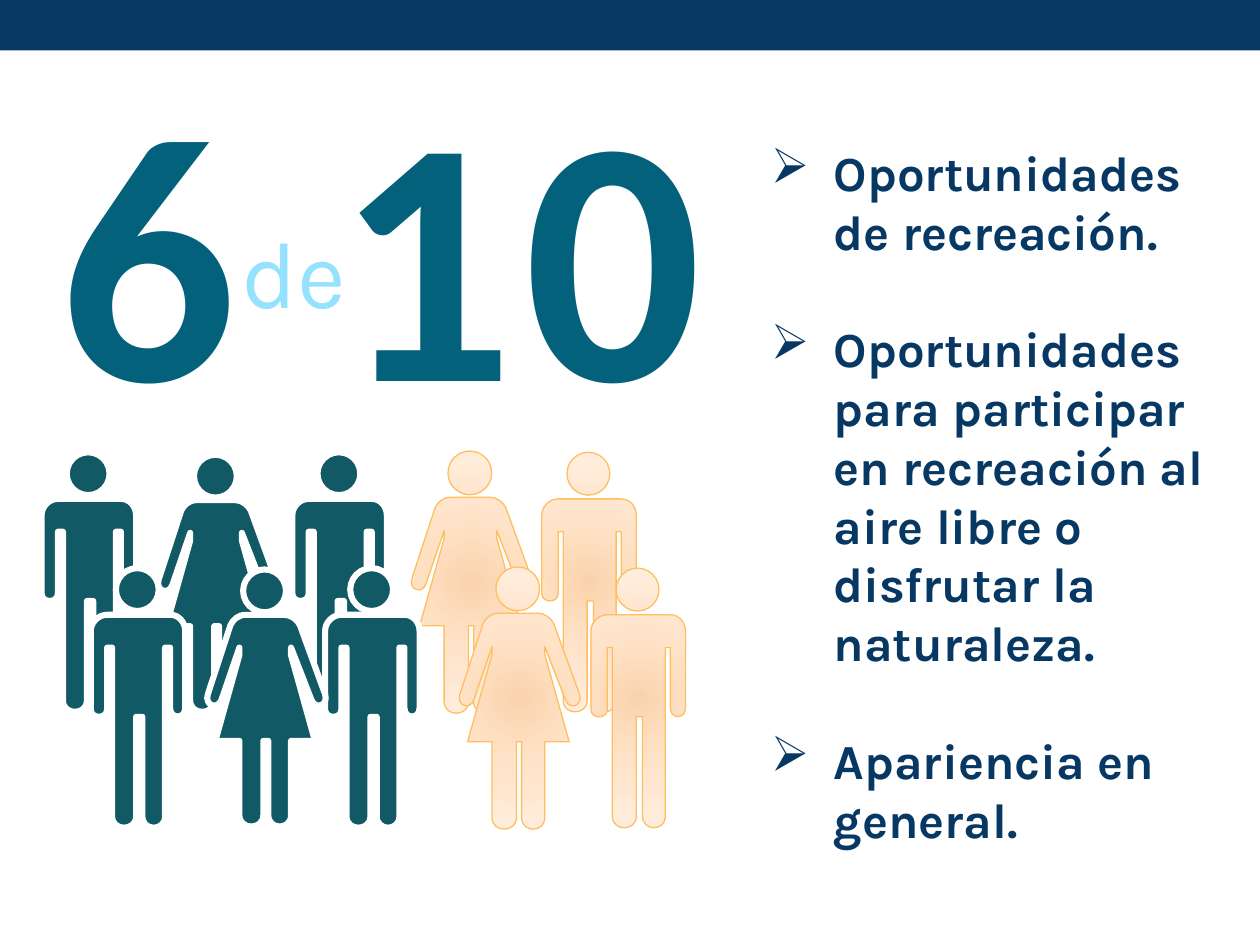
from lxml.etree import SubElement, fromstring
from pptx import Presentation
from pptx.dml.color import RGBColor
from pptx.enum.shapes import MSO_SHAPE as Shape
from pptx.enum.text import MSO_AUTO_SIZE as AutoSize, PP_ALIGN as Align
from pptx.oxml.ns import nsdecls, qn
from pptx.util import Inches, Pt

NAVY, BLUE, SKY = "073763", "04617B", "95E2FF"
TEAL, WHITE, ORANGE = "115964", "FFFFFF", "FFBE5F"
GLOW = [(0, "FAD3AD"), (45, "FFE3C8"), (100, "FFEFE1")]
NEEDS = [
    "Oportunidades de recreación.",
    "Oportunidades para participar en recreación al aire libre o disfrutar la naturaleza.",
    "Apariencia en general.",
]

MAN = [
    (13, 37), (63, 37), (70, 37, 75, 43, 75, 50),
    (75, 111), (75, 120, 63, 120, 63, 111), (63, 63), (59, 63),
    (59, 197), (59, 209, 41, 209, 41, 197), (41, 118), (36, 118),
    (36, 197), (36, 209, 17, 209, 17, 197), (17, 63), (13, 63),
    (13, 112), (13, 120, 0, 120, 0, 112), (0, 50), (0, 43, 6, 37, 13, 37),
]
WOMAN = [
    (31, 36), (62, 36), (67, 36, 72, 40, 74, 44),
    (94, 99), (97, 108, 86, 112, 83, 103), (67, 62), (67, 68), (86, 136), (67, 136),
    (67, 195), (67, 207, 49, 207, 49, 195), (49, 136), (45, 136),
    (45, 195), (45, 207, 26, 207, 26, 195), (26, 136), (7, 136), (26, 68), (26, 62),
    (12, 103), (9, 112, -2, 108, 1, 99), (19, 44), (21, 40, 25, 36, 31, 36),
]
HEAD_RADIUS = 17
BODIES = {"man": (MAN, 37, 75, 206), "woman": (WOMAN, 46, 94, 204)}
PEOPLE = [
    ("man", .33, 3.59, True), ("man", 2.32, 3.59, True), ("man", 4.30, 3.59, False),
    ("woman", 1.25, 3.61, True), ("woman", 3.26, 3.58, False),
    ("man", .72, 4.51, True), ("man", 2.58, 4.51, True), ("man", 4.69, 4.51, False),
    ("woman", 1.64, 4.52, True), ("woman", 3.64, 4.50, False),
]


def color(value):
    return RGBColor.from_string(value)


def add_step(contour, kind, coordinates):
    step = SubElement(contour, qn(f"a:{kind}"))
    for x, y in zip(coordinates[::2], coordinates[1::2]):
        point = SubElement(step, qn("a:pt"))
        point.set("x", str(x))
        point.set("y", str(y))


def draw_contours(contour, outline, head_x):
    for step in list(contour):
        contour.remove(step)
    add_step(contour, "moveTo", outline[0])
    for part in outline[1:]:
        add_step(contour, "lnTo" if len(part) == 2 else "cubicBezTo", part)
    add_step(contour, "close", ())
    add_step(contour, "moveTo", (head_x + HEAD_RADIUS, HEAD_RADIUS))
    for start in (0, 10800000):
        arc = SubElement(contour, qn("a:arcTo"))
        for name, value in (("wR", HEAD_RADIUS), ("hR", HEAD_RADIUS),
                            ("stAng", start), ("swAng", 10800000)):
            arc.set(name, str(value))
    add_step(contour, "close", ())


def add_glow(shape):
    stops = "".join(f'<a:gs pos="{pos * 1000}"><a:srgbClr val="{value}"/></a:gs>'
                    for pos, value in GLOW)
    gradient = fromstring(
        f'<a:gradFill {nsdecls("a")}><a:gsLst>{stops}</a:gsLst><a:path path="circle">'
        '<a:fillToRect l="100000" t="100000" r="100000" b="100000"/></a:path></a:gradFill>')
    properties = shape.element.spPr
    properties.replace(properties.find(qn("a:solidFill")), gradient)


def add_person(page, kind, left, top, counted):
    outline, head_x, width, height = BODIES[kind]
    scale = 1.02 if kind == "woman" and not counted else 1
    builder = page.shapes.build_freeform(0, 0, scale=Inches(.01) * scale)
    builder.add_line_segments([(width, 0), (width, height), (0, height)], close=True)
    person = builder.convert_to_shape(Inches(left), Inches(top))
    draw_contours(person.element.spPr.find(f".//{qn('a:path')}"), outline, head_x)
    person.shadow.inherit = False
    person.fill.solid()
    person.fill.fore_color.rgb = color(TEAL)
    if not counted:
        add_glow(person)
    person.line.color.rgb = color(WHITE if counted else ORANGE)
    person.line.width = Pt(3.5 if counted else .75)


def add_text(page, area, texts, size, font, ink, bold=False, align=None):
    box = page.shapes.add_textbox(*map(Inches, area))
    frame = box.text_frame
    frame.text = "\n".join(texts)
    frame.word_wrap = True
    frame.auto_size = AutoSize.SHAPE_TO_FIT_TEXT
    for para in frame.paragraphs:
        para.alignment = align
        style = para.runs[0].font
        style.size, style.name, style.bold = Pt(size), font, bold
        style.color.rgb = color(ink)
    return frame.paragraphs


def add_bullets(paragraphs, gap):
    for index, para in enumerate(paragraphs):
        properties = para._p.get_or_add_pPr()
        properties.set("marL", str(Inches(.5)))
        properties.set("indent", str(-Inches(.5)))
        SubElement(properties, qn("a:buChar")).set("char", "➢")
        if index:
            para.space_before = Pt(gap)


def main():
    deck = Presentation()
    deck.slide_width, deck.slide_height = Inches(10), Inches(7.5)
    page = deck.slides.add_slide(deck.slide_layouts[6])

    band = page.shapes.add_shape(Shape.RECTANGLE, 0, 0, Inches(10), Inches(.4))
    band.shadow.inherit = False
    band.fill.solid()
    band.fill.fore_color.rgb = color(NAVY)
    band.line.fill.background()

    figure = add_text(page, (-.58, .2, 7.21, 3.47), ["6 10"], 200, "Calibri", BLUE, True, Align.CENTER)
    figure[0].runs[0].font._element.set("spc", "600")
    for person in PEOPLE:
        add_person(page, *person)
    add_text(page, (1.65, 1.65, 1.37, 1), ["de"], 54, "Karla", SKY, align=Align.CENTER)
    needs = add_text(page, (6.02, 1.08, 3.83, 5.71), NEEDS, 28, "Karla", NAVY, True)
    add_bullets(needs, 33.5)
    deck.save("out.pptx")


if __name__ == "__main__":
    main()
